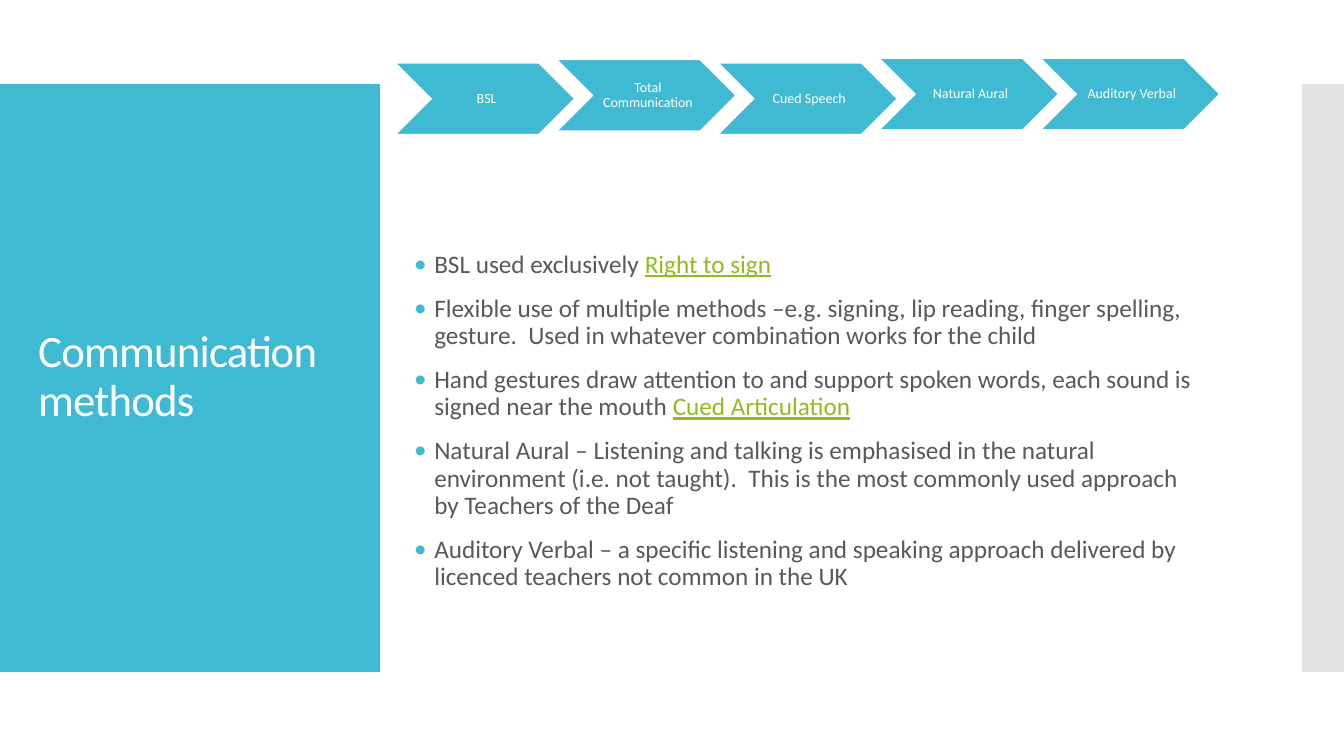
import dataclasses

import pptx
import pptx.dml.color
import pptx.enum.shapes
import pptx.enum.text
import pptx.oxml
import pptx.oxml.ns
import pptx.util


@dataclasses.dataclass(frozen=True)
class Theme:
    font: str = "Calibri"
    accent: str = "40BAD2"
    edge: str = "C8C8C8"
    light: str = "FFFFFF"
    body: str = "595959"
    link: str = "90BB23"
    title_size: int = 32
    body_size: int = 18
    step_size: int = 10


THEME = Theme()
CELL = pptx.util.Inches(7.5 / 18)
COLUMNS, ROWS = 32, 18

STEPS = [
    ("BSL", 1.5),
    ("Total Communication", 1.42),
    ("Cued Speech", 1.5),
    ("Natural Aural", 1.39),
    ("Auditory Verbal", 1.39),
]
METHODS = [
    ("BSL used exclusively ", "Right to sign"),
    ("Flexible use of multiple methods –e.g. signing, lip reading, finger spelling, "
     "gesture.  Used in whatever combination works for the child", ""),
    ("Hand gestures draw attention to and support spoken words, each sound is "
     "signed near the mouth ", "Cued Articulation"),
    ("Natural Aural – Listening and talking is emphasised in the natural environment "
     "(i.e. not taught).  This is the most commonly used approach by Teachers of the Deaf", ""),
    ("Auditory Verbal – a specific listening and speaking approach delivered by "
     "licenced teachers not common in the UK", ""),
]


def rgb(color):
    return pptx.dml.color.RGBColor.from_string(color)


def grid(*cells):
    return [round(cell * CELL) for cell in cells]


def add_xml(parent, tag, **attributes):
    element = pptx.oxml.parse_xml(f"<a:{tag} {pptx.oxml.ns.nsdecls('a')}/>")
    for name, value in attributes.items():
        element.set(name, value)
    parent.append(element)
    return element


def format_run(run, size, color, underline=None):
    run.font.name = THEME.font
    run.font.size = pptx.util.Pt(size)
    run.font.color.rgb = rgb(color)
    run.font.underline = underline


def add_block(slide, kind, box, color):
    shape = slide.shapes.add_shape(kind, *grid(*box))
    shape.shadow.inherit = False
    shape.fill.solid()
    shape.fill.fore_color.rgb = rgb(color)
    shape.line.fill.background()
    return shape


def add_step(slide, label, box):
    chevron = add_block(slide, pptx.enum.shapes.MSO_SHAPE.CHEVRON, box, THEME.accent)
    chevron.line.color.rgb = rgb(THEME.light)
    chevron.line.width = pptx.util.Pt(0.85)
    frame = chevron.text_frame
    frame.text = label
    frame.word_wrap = True
    frame.vertical_anchor = pptx.enum.text.MSO_ANCHOR.MIDDLE
    frame.margin_left = pptx.util.Inches(0.04)
    frame.margin_right = frame.margin_top = frame.margin_bottom = pptx.util.Inches(0.01)
    paragraph = frame.paragraphs[0]
    paragraph.alignment = pptx.enum.text.PP_ALIGN.CENTER
    paragraph.line_spacing = 0.9
    format_run(paragraph.runs[0], THEME.step_size, THEME.light)


def place_placeholder(slide, shape, box):
    slide.shapes._spTree.append(shape._element)
    shape.left, shape.top, shape.width, shape.height = grid(*box)
    frame = shape.text_frame
    frame.word_wrap = True
    frame.auto_size = pptx.enum.text.MSO_AUTO_SIZE.NONE
    frame.vertical_anchor = pptx.enum.text.MSO_ANCHOR.MIDDLE
    return frame


def fill_title(slide, text, box):
    frame = place_placeholder(slide, slide.shapes.title, box)
    frame.text = text
    paragraph = frame.paragraphs[0]
    paragraph.alignment = pptx.enum.text.PP_ALIGN.LEFT
    paragraph.line_spacing = 0.9
    run = paragraph.runs[0]
    format_run(run, THEME.title_size, THEME.light)
    run.font._element.set("spc", "-60")


def format_bullet(paragraph):
    paragraph.line_spacing = 0.9
    paragraph.space_before = pptx.util.Pt(12)
    paragraph.space_after = pptx.util.Pt(0)
    properties = paragraph._p.get_or_add_pPr()
    indent = pptx.util.Inches(0.2)
    properties.set("marL", str(indent))
    properties.set("indent", str(-indent))
    add_xml(add_xml(properties, "buClr"), "srgbClr", val=THEME.accent)
    add_xml(properties, "buFont", typeface=THEME.font)
    add_xml(properties, "buChar", char="•")


def fill_methods(slide, methods, box):
    frame = place_placeholder(slide, slide.placeholders[1], box)
    frame.text = "\n".join(text for text, _ in methods)
    for paragraph, (_, link) in zip(frame.paragraphs, methods):
        format_bullet(paragraph)
        format_run(paragraph.runs[0], THEME.body_size, THEME.body)
        if link:
            run = paragraph.add_run()
            run.text = link
            format_run(run, THEME.body_size, THEME.link, True)


def main():
    presentation = pptx.Presentation()
    presentation.slide_width, presentation.slide_height = grid(COLUMNS, ROWS)
    slide = presentation.slides.add_slide(presentation.slide_layouts[1])
    rectangle = pptx.enum.shapes.MSO_SHAPE.RECTANGLE

    add_block(slide, rectangle, (0, 2, 9.05, 14), THEME.accent)
    edge = add_block(slide, rectangle, (31, 2, 1, 14), THEME.edge)
    edge_color = edge._element.spPr.find(".//" + pptx.oxml.ns.qn("a:srgbClr"))
    add_xml(edge_color, "alpha", val="50000")

    fill_title(slide, "Communication methods", (0.67, 2.95, 7.73, 12.07))
    fill_methods(slide, METHODS, (9.62, 3.31, 19.2, 13.44))
    for index, (label, top) in enumerate(STEPS):
        add_step(slide, label, (9.42 + 3.84 * index, top, 4.26, 1.7))

    presentation.save("out.pptx")


if __name__ == "__main__":
    main()
